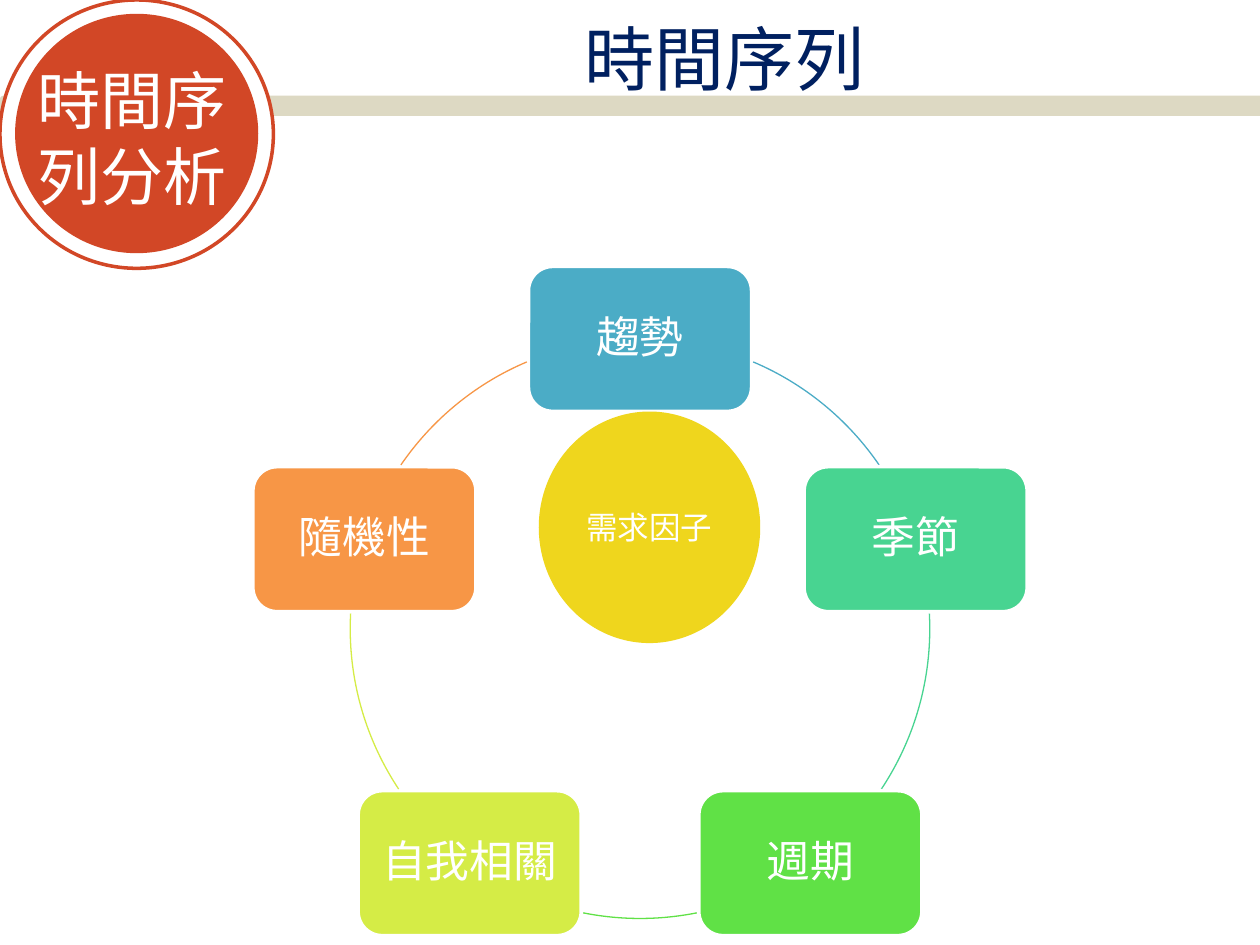
"""Build a slide showing the five demand factors of a time series in a ring."""
from dataclasses import dataclass
from math import cos, radians, sin

from lxml.etree import SubElement
from pptx import Presentation
from pptx.dml.color import RGBColor
from pptx.enum.shapes import MSO_SHAPE as Kind
from pptx.enum.text import MSO_ANCHOR as Anchor, MSO_AUTO_SIZE as Auto, PP_ALIGN as Align
from pptx.oxml.ns import qn
from pptx.util import Inches, Pt

WHITE = RGBColor(0xFF, 0xFF, 0xFF)
NAVY = RGBColor(0x00, 0x20, 0x60)
RED = RGBColor(0xD2, 0x47, 0x26)
SAND = RGBColor(0xDD, 0xD9, 0xC3)
GOLD = RGBColor(0xEF, 0xD6, 0x1D)
TEAL = RGBColor(0x4B, 0xAC, 0xC6)
MINT = RGBColor(0x48, 0xD4, 0x91)
GREEN = RGBColor(0x60, 0xE1, 0x46)
LIME = RGBColor(0xD5, 0xEC, 0x46)
ORANGE = RGBColor(0xF7, 0x96, 0x46)

LATIN = "Calibri"
HAN = "Noto Sans CJK SC"
MID_X, MID_Y, RADIUS = 5.08, 4.99, 2.3
CARD_W, CARD_H = 1.77, 1.15


@dataclass(frozen=True)
class Factor:
    """A card on the ring and the arc that leaves it, in degrees."""
    name: str
    color: RGBColor
    start: float
    end: float


FACTORS = [
    Factor("趨勢", TEAL, 293, 325.6),
    Factor("季節", MINT, 357, 33.6),
    Factor("週期", GREEN, 78.7, 101.3),
    Factor("自我相關", LIME, 146.4, 183),
    Factor("隨機性", ORANGE, 214.4, 247),
]


def place(item, left: float, top: float, width: float, height: float) -> None:
    """Set position and size in inches."""
    item.left, item.top = Inches(left), Inches(top)
    item.width, item.height = Inches(width), Inches(height)


def write(frame, lines: list[str], size: float, face: str, color: RGBColor, align: Align) -> None:
    """Fill a text frame with one paragraph per line."""
    for row, line in enumerate(lines):
        para = frame.add_paragraph() if row else frame.paragraphs[0]
        para.alignment = align
        run = para.add_run()
        run.text = line
        font = run.font
        font.size, font.name, font.color.rgb = Pt(size), face, color
        SubElement(run._r.get_or_add_rPr(), qn("a:ea"), typeface=face)


def draw(slide, kind: Kind, box: tuple, fill: RGBColor | None = None,
         line: RGBColor | None = None, width: float = 2):
    """Add a flat preset shape."""
    shape = slide.shapes.add_shape(kind, *map(Inches, box))
    shape.shadow.inherit = False
    if fill is None:
        shape.fill.background()
    else:
        shape.fill.solid()
        shape.fill.fore_color.rgb = fill
    if line is None:
        shape.line.fill.background()
    else:
        shape.line.color.rgb = line
        shape.line.width = Pt(width)
    return shape


def label(shape, text: str, size: float) -> None:
    """Centre white text in a shape."""
    frame = shape.text_frame
    frame.word_wrap = True
    frame.vertical_anchor = Anchor.MIDDLE
    write(frame, [text], size, LATIN, WHITE, Align.CENTER)


def add_ring(slide) -> None:
    """Place the factors at equal angles, clockwise from the top."""
    ring = (MID_X - RADIUS, MID_Y - RADIUS, 2 * RADIUS, 2 * RADIUS)
    for step, factor in enumerate(FACTORS):
        angle = radians(360 / len(FACTORS) * step - 90)
        left = MID_X + RADIUS * cos(angle) - CARD_W / 2
        top = MID_Y + RADIUS * sin(angle) - CARD_H / 2
        card = draw(slide, Kind.ROUNDED_RECTANGLE, (left, top, CARD_W, CARD_H), factor.color, WHITE)
        label(card, factor.name, 25)
        card.text_frame.paragraphs[0].line_spacing = 0.9
        arc = draw(slide, Kind.ARC, ring, line=factor.color, width=0.75)
        arc.adjustments[0] = factor.start * 0.6
        arc.adjustments[1] = factor.end * 0.6


def add_badge(slide) -> None:
    """Draw the header bar and the round chapter badge."""
    bar = draw(slide, Kind.ROUNDED_RECTANGLE, (0, 0.76, 10.24, 0.16), SAND)
    bar.adjustments[0] = 0.17
    draw(slide, Kind.OVAL, (0, 0, 2.17, 2.13), WHITE, RED)
    draw(slide, Kind.OVAL, (0.12, 0.11, 1.93, 1.9), RED)
    box = slide.shapes.add_textbox(*map(Inches, (0.2, 0.44, 1.72, 1.31)))
    frame = box.text_frame
    frame.word_wrap = False
    frame.auto_size = Auto.SHAPE_TO_FIT_TEXT
    write(frame, ["時間序", "列分析"], 36, HAN, WHITE, Align.LEFT)


def main() -> None:
    """Build and save the slide."""
    deck = Presentation()
    deck.slide_width, deck.slide_height = Inches(10), Inches(7.5)
    slide = deck.slides.add_slide(deck.slide_layouts[5])
    title = slide.shapes.title
    place(title, 1.5, 0, 8.5, 0.92)
    title.text_frame.auto_size = Auto.NONE
    title.text_frame.vertical_anchor = Anchor.MIDDLE
    write(title.text_frame, ["時間序列"], 40, HAN, NAVY, Align.CENTER)
    add_ring(slide)
    hub = draw(slide, Kind.OVAL, (4.29, 3.28, 1.73, 1.81), GOLD, GOLD)
    label(hub, "需求因子", 18)
    add_badge(slide)
    deck.save("out.pptx")


if __name__ == "__main__":
    main()
